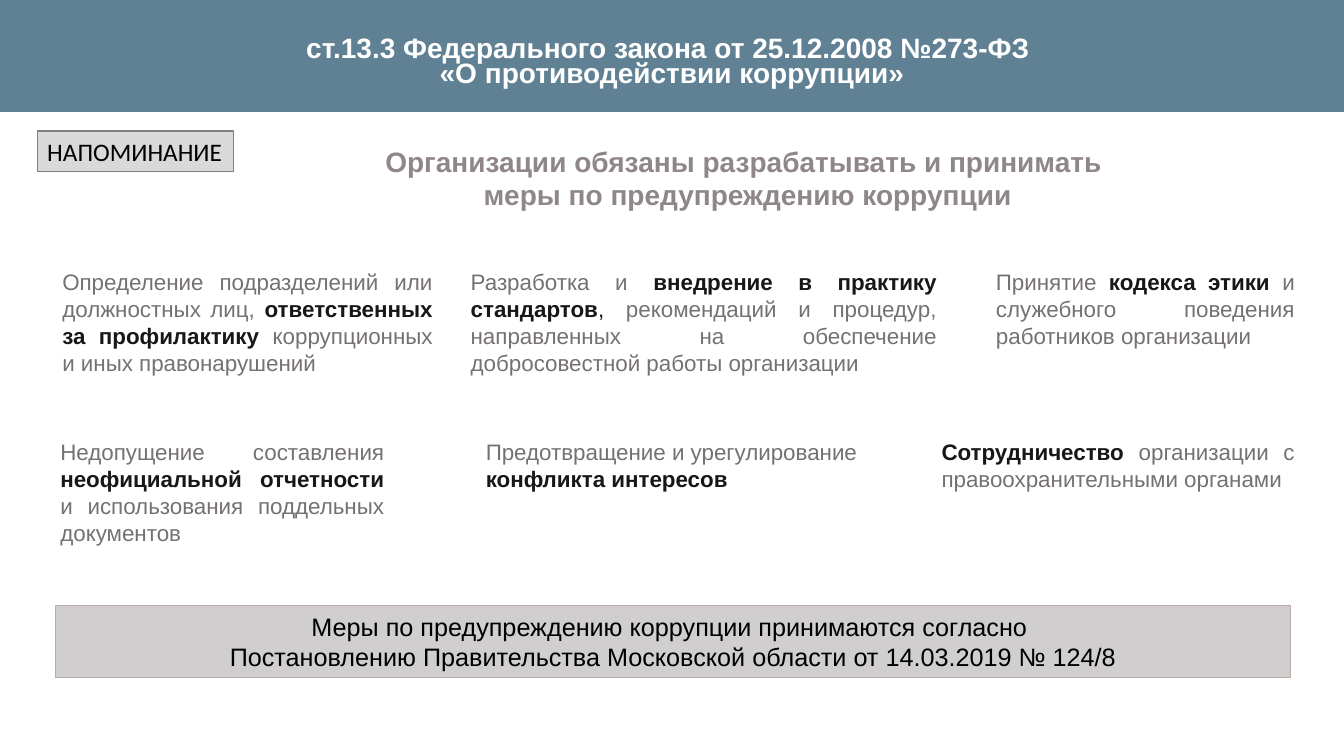
from dataclasses import dataclass

from pptx import Presentation
from pptx.dml.color import RGBColor
from pptx.enum.shapes import MSO_SHAPE as Shape
from pptx.enum.text import MSO_ANCHOR as Anchor, PP_ALIGN as Align
from pptx.slide import Slide
from pptx.text.text import Font
from pptx.util import Inches, Pt

COLORS = {
    "header": "608194",
    "white": "FFFFFF",
    "heading": "8F8687",
    "badge": "D9D9D9",
    "badge_line": "808080",
    "footer": "D0CECE",
    "footer_line": "BAADA4",
    "body": "767171",
    "accent": "181717",
    "black": "000000",
}


@dataclass(frozen=True)
class Span:
    text: str
    color: str = "body"
    bold: bool = False


@dataclass(frozen=True)
class Measure:
    left: float
    top: float
    width: float
    height: float
    spans: tuple[Span, ...]
    align: Align = Align.JUSTIFY


@dataclass(frozen=True)
class Panel:
    left: float
    top: float
    width: float
    height: float
    fill: str
    lines: tuple[str, ...]
    color: str
    size: int
    border: str | None = None
    bold: bool = False
    font: str = "Arial"
    align: Align = Align.CENTER
    wrap: bool = True
    line_spacing: float = 1.0
    text_top: float | None = None  # distance to the text; None centres it


def key(text: str) -> Span:
    return Span(text, "accent", True)


def rgb(name: str) -> RGBColor:
    return RGBColor.from_string(COLORS[name])


def style(font: Font, name: str, size: int, color: str, bold: bool) -> None:
    font.name, font.size, font.bold = name, Pt(size), bold
    font.color.rgb = rgb(color)


def draw_measure(slide: Slide, measure: Measure) -> None:
    box = slide.shapes.add_textbox(Inches(measure.left), Inches(measure.top),
                                   Inches(measure.width), Inches(measure.height))
    box.text_frame.word_wrap = True
    paragraph = box.text_frame.paragraphs[0]
    paragraph.alignment = measure.align
    for span in measure.spans:
        run = paragraph.add_run()
        run.text = span.text
        style(run.font, "Arial", 16, span.color, span.bold)


def draw_panel(slide: Slide, panel: Panel) -> None:
    box = slide.shapes.add_shape(Shape.RECTANGLE, Inches(panel.left), Inches(panel.top),
                                 Inches(panel.width), Inches(panel.height))
    box.shadow.inherit = False
    box.fill.solid()
    box.fill.fore_color.rgb = rgb(panel.fill)
    if panel.border:
        box.line.color.rgb = rgb(panel.border)
        box.line.width = Pt(0.75)
    else:
        box.line.fill.background()

    frame = box.text_frame
    frame.text = "\n".join(panel.lines)
    frame.word_wrap = panel.wrap
    frame.vertical_anchor = Anchor.MIDDLE
    if panel.text_top is not None:
        frame.vertical_anchor = Anchor.TOP
        frame.margin_top = Inches(panel.text_top)
    for paragraph in frame.paragraphs:
        paragraph.alignment = panel.align
        paragraph.line_spacing = panel.line_spacing
        for run in paragraph.runs:
            style(run.font, panel.font, panel.size, panel.color, panel.bold)


ROW_1, ROW_2 = 2.61, 4.3

MEASURES = (
    Measure(0.52, ROW_1, 3.87, 1.18, (
        Span("Определение подразделений или должностных лиц, "),
        key("ответственных за профилактику "),
        Span("коррупционных и иных правонарушений"))),
    Measure(4.57, ROW_1, 4.82, 1.18, (
        Span("Разработка и "),
        key("внедрение в практику стандартов"),
        Span(",", "accent"),
        Span(" рекомендаций и процедур, направленных на обеспечение "
             "добросовестной работы организации"))),
    Measure(9.78, ROW_1, 3.16, 0.91, (
        Span("Принятие "),
        key("кодекса этики "),
        Span("и служебного поведения работников организации"))),
    Measure(0.5, ROW_2, 3.41, 1.18, (
        Span("Недопущение составления "),
        key("неофициальной отчетности "),
        Span("и использования поддельных документов"))),
    Measure(4.72, ROW_2, 4.17, 0.64, (
        Span("Предотвращение и урегулирование "),
        key("конфликта интересов")), Align.LEFT),
    Measure(9.24, ROW_2, 3.7, 0.91, (
        key("Сотрудничество"),
        Span(" организации с правоохранительными органами"))),
)

PANELS = (
    # Header band
    Panel(0, 0, 13.33, 1.11, "header",
          ("ст.13.3 Федерального закона от 25.12.2008 №273-ФЗ ",
           "«О противодействии коррупции»"),
          "white", 20, bold=True, line_spacing=0.75, text_top=0.38),
    # Heading
    Panel(2.74, 1.38, 9.35, 0.77, "white",
          ("Организации обязаны разрабатывать и принимать ",
           "меры по предупреждению коррупции"),
          "heading", 20, border="white", bold=True),
    # Reminder badge
    Panel(0.37, 1.3, 1.95, 0.4, "badge", ("НАПОМИНАНИЕ",), "black", 18,
          border="badge_line", font="Calibri", align=Align.LEFT, wrap=False),
    # Footer decree
    Panel(0.55, 6.01, 12.25, 0.71, "footer",
          ("Меры по предупреждению коррупции принимаются согласно ",
           "Постановлению Правительства Московской области от 14.03.2019 № 124/8"),
          "black", 18, border="footer_line"),
)


def main() -> None:
    deck = Presentation()
    deck.slide_width, deck.slide_height = Inches(13.33), Inches(7.5)
    slide = deck.slides.add_slide(deck.slide_layouts[6])
    for measure in MEASURES:
        draw_measure(slide, measure)
    for panel in PANELS:
        draw_panel(slide, panel)
    deck.save("out.pptx")


if __name__ == "__main__":
    main()
